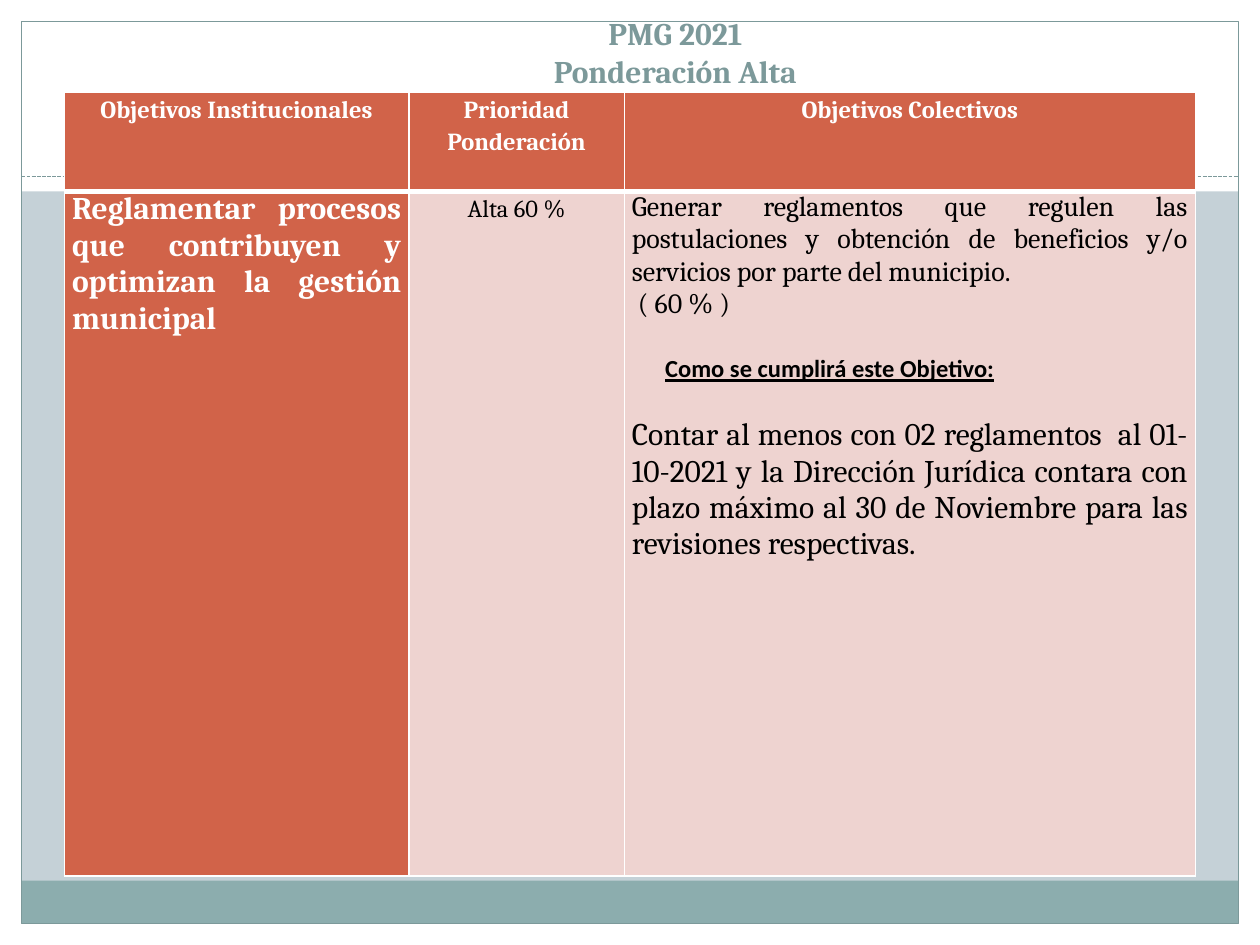
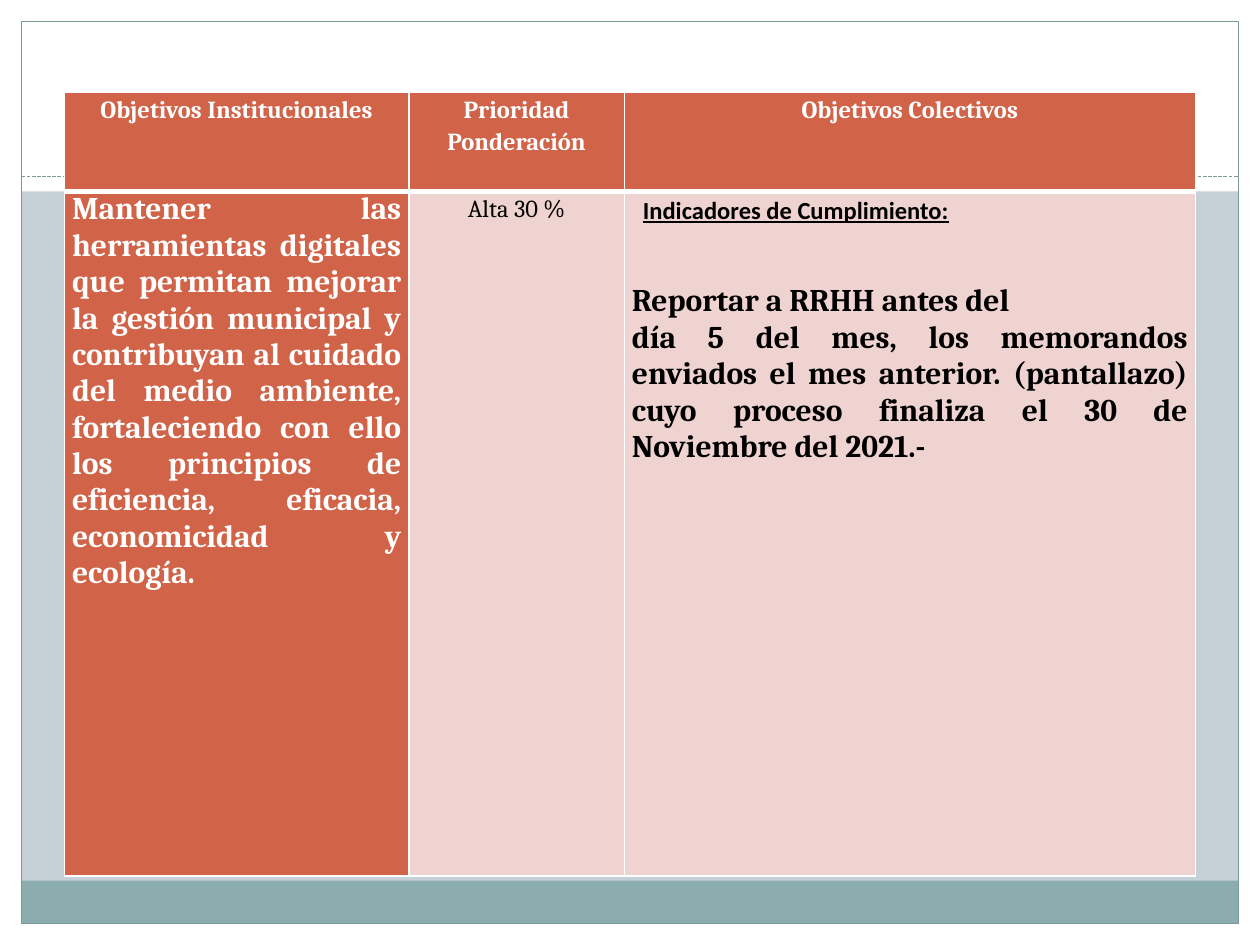
from lxml import etree
from pptx import Presentation
from pptx.dml.color import RGBColor
from pptx.enum.dml import MSO_LINE
from pptx.enum.shapes import MSO_CONNECTOR, MSO_SHAPE
from pptx.enum.text import MSO_ANCHOR, PP_ALIGN
from pptx.oxml.ns import qn
from pptx.util import Pt

RECT = MSO_SHAPE.RECTANGLE
STRAIGHT = MSO_CONNECTOR.STRAIGHT
SYS_DASH = MSO_LINE.SQUARE_DOT
BOTTOM = MSO_ANCHOR.BOTTOM
CENTER, JUSTIFY = PP_ALIGN.CENTER, PP_ALIGN.JUSTIFY

COLORS = {
    "background": "C5D1D7",
    "white": "FFFFFF",
    "black": "000000",
    "teal": "7C999A",
    "footer": "8CADAE",
    "accent": "D16349",
    "pale": "EED3D0",
}
WIDTH, HEIGHT = 720, 540
MARGIN = 12.24
TOP_BAND = 109.44
FOOTER = 24.5
RULE_Y = 100.8
TITLE_BOX = (241.2, 15.12, 289.44, 39.6)
TABLE_BOX = (36.9, 52.5, 646.2, 448)
COLUMN_WIDTHS = (196.7, 123.2, 326.3)
HEADER_HEIGHT = 57
HEADERS = ("Objetivos Institucionales", "Prioridad Ponderación", "Objetivos Colectivos")
SUBHEADING = {"font": "Calibri", "bold": True, "underline": True, "line_spacing": 1.15}


def rgb(name):
    return RGBColor.from_string(COLORS[name])


def add_text(tf, text, first=False, size=14, font="Cambria", color="black", bold=False,
             underline=False, align=JUSTIFY, line_spacing=1.0, before=0, indent=0):
    p = tf.paragraphs[0] if first else tf.add_paragraph()
    p.alignment = align
    p.line_spacing = line_spacing
    p.space_before = Pt(before)
    p._p.get_or_add_pPr().set("marL", str(Pt(indent)))
    r = p.add_run()
    r.text = text
    r.font.size = Pt(size)
    r.font.name = font
    r.font.bold = bold
    r.font.underline = underline
    r.font.color.rgb = rgb(color)


def add_rect(slide, box, fill=None, line=None):
    sp = slide.shapes.add_shape(RECT, *map(Pt, box))
    sp.shadow.inherit = False
    if fill:
        sp.fill.solid()
        sp.fill.fore_color.rgb = rgb(fill)
    else:
        sp.fill.background()
    if line:
        sp.line.color.rgb = rgb(line)
        sp.line.width = Pt(0.75)
    else:
        sp.line.fill.background()


def add_frame(slide):
    """Background, white edges, footer band, outline and dashed rule."""
    slide.background.fill.solid()
    slide.background.fill.fore_color.rgb = rgb("background")
    right, bottom = WIDTH - MARGIN, HEIGHT - MARGIN
    inner = right - MARGIN
    for edge in ((0, bottom, WIDTH, MARGIN), (0, 0, WIDTH, TOP_BAND),
                 (0, 0, MARGIN, HEIGHT), (right, 0, MARGIN, HEIGHT)):
        add_rect(slide, edge, fill="white")
    add_rect(slide, (MARGIN, bottom - FOOTER, inner, FOOTER), fill="footer")
    add_rect(slide, (MARGIN, MARGIN, inner, bottom - MARGIN), line="teal")
    rule = slide.shapes.add_connector(STRAIGHT, Pt(MARGIN), Pt(RULE_Y), Pt(right), Pt(RULE_Y))
    rule.line.color.rgb = rgb("teal")
    rule.line.width = Pt(0.75)
    rule.line.dash_style = SYS_DASH
    etree.SubElement(rule._element.spPr, qn("a:effectLst"))


def add_title(slide, box, lines):
    tf = slide.shapes.add_textbox(*map(Pt, box)).text_frame
    tf.word_wrap = True
    tf.vertical_anchor = BOTTOM
    for i, line in enumerate(lines):
        add_text(tf, line, first=i == 0, size=18, color="teal", bold=True, align=CENTER)


def set_borders(cell, top, bottom):
    tc_pr = cell._tc.get_or_add_tcPr()
    for side, width in (("L", 1), ("R", 1), ("T", top), ("B", bottom)):
        ln = etree.SubElement(tc_pr, qn(f"a:ln{side}"), w=str(Pt(width)))
        fill = etree.SubElement(ln, qn("a:solidFill"))
        etree.SubElement(fill, qn("a:srgbClr"), val=COLORS["white"])


def fill_cell(cell, fill, paragraphs, top=1, bottom=1):
    set_borders(cell, top, bottom)
    cell.fill.solid()
    cell.fill.fore_color.rgb = rgb(fill)
    cell.margin_left = cell.margin_right = Pt(4.3)
    cell.margin_top = cell.margin_bottom = 0
    for i, (text, style) in enumerate(paragraphs):
        add_text(cell.text_frame, text, first=i == 0, **style)


def add_goals_table(slide, box, goal, weight, details):
    table = slide.shapes.add_table(2, len(HEADERS), *map(Pt, box)).table
    for column, width in zip(table.columns, COLUMN_WIDTHS):
        column.width = Pt(width)
    table.rows[0].height = Pt(HEADER_HEIGHT)
    table.rows[1].height = Pt(box[3] - HEADER_HEIGHT)
    centered = {"align": CENTER, "line_spacing": 1.15}
    strong = {"color": "white", "bold": True}
    for i, header in enumerate(HEADERS):
        fill_cell(table.cell(0, i), "accent", [(header, centered | strong)], bottom=3)
    body = (("accent", [(goal, strong | {"size": 18})]),
            ("pale", [(weight, centered)]),
            ("pale", details))
    for i, (fill, paragraphs) in enumerate(body):
        fill_cell(table.cell(1, i), fill, paragraphs, top=3)


def build_goal_slide(prs, goal, weight, details, title=()):
    slide = prs.slides.add_slide(prs.slide_layouts[6])
    add_frame(slide)
    add_goals_table(slide, TABLE_BOX, goal, weight, details)
    if title:
        add_title(slide, TITLE_BOX, title)


def main():
    prs = Presentation()
    prs.slide_width, prs.slide_height = Pt(WIDTH), Pt(HEIGHT)
    build_goal_slide(
        prs,
        "Reglamentar procesos que contribuyen y optimizan la gestión municipal",
        "Alta 60 %",
        [("Generar reglamentos que regulen las postulaciones y obtención de beneficios "
          "y/o servicios por parte del municipio.", {"size": 16}),
         ("( 60 % )", {"size": 16, "indent": 3.5}),
         ("Como se cumplirá este Objetivo:", SUBHEADING | {"before": 17, "indent": 19}),
         ("Contar al menos con 02 reglamentos  al 01-10-2021 y la Dirección Jurídica "
          "contara con plazo máximo al 30 de Noviembre para las revisiones respectivas.",
          {"size": 18, "before": 19})],
        title=("PMG 2021", "Ponderación Alta"),
    )
    build_goal_slide(
        prs,
        "Mantener las herramientas digitales que permitan mejorar la gestión municipal y "
        "contribuyan al cuidado del medio ambiente, fortaleciendo con ello los principios "
        "de eficiencia, eficacia, economicidad y ecología.",
        "Alta 30 %",
        [("Indicadores de Cumplimiento:", SUBHEADING | {"indent": 6.3}),
         ("Reportar a RRHH antes del", {"size": 18, "bold": True, "before": 33}),
         ("día 5 del mes, los memorandos enviados el mes anterior. (pantallazo) cuyo "
          "proceso finaliza el 30 de Noviembre del 2021.-", {"size": 18, "bold": True})],
    )
    prs.save("out.pptx")


if __name__ == "__main__":
    main()
